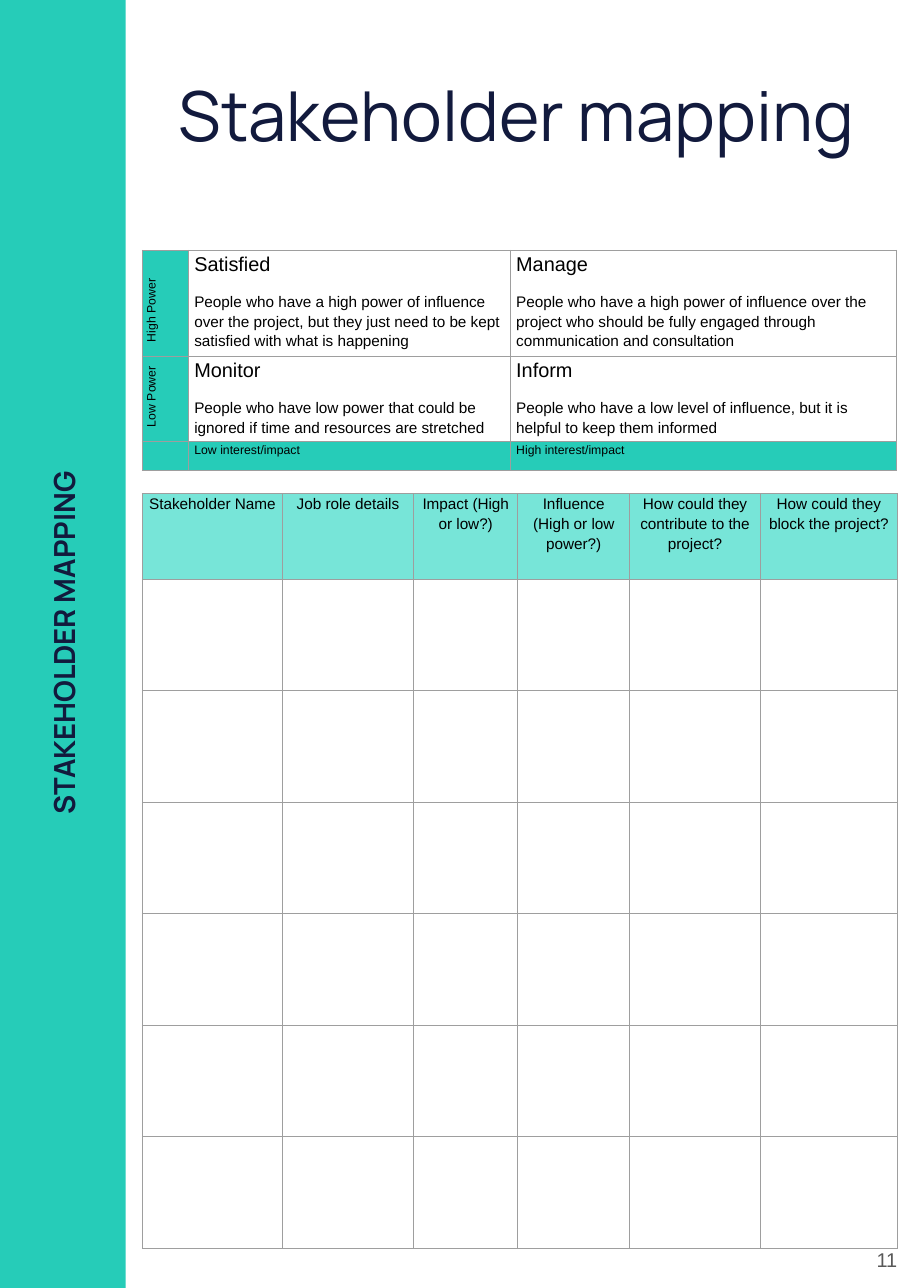
from lxml import etree
from pptx import Presentation
from pptx import util as u
from pptx.dml.color import RGBColor
from pptx.enum import shapes, text
from pptx.oxml.ns import qn

COLORS = {"teal": "26CCB8", "mint": "77E5D8", "navy": "121A3D",
          "line": "9E9E9E", "black": "000000", "grey": "595959"}
CENTER, LEFT, RIGHT = text.PP_ALIGN.CENTER, text.PP_ALIGN.LEFT, text.PP_ALIGN.RIGHT

SIDEBAR = (-0.1, 0, 3, 29.7)
LABELS = [
    {"words": "Stakeholder mapping", "box": (3.33, 1.42, 17.15, 4.37), "inset": 0.25,
     "font": {"name": "Manrope", "size": u.Pt(45)}, "color": "navy", "align": CENTER},
    {"words": "STAKEHOLDER MAPPING", "box": (-11.79, 14.17, 26.52, 1.32), "inset": 0.25,
     "font": {"name": "Manrope", "size": u.Pt(19), "bold": True}, "color": "navy",
     "align": CENTER, "rotation": 270},
    {"words": "11", "box": (19.74, 27.91, 1.27, 2.26), "inset": 0.33,
     "font": {"name": "Arial", "size": u.Pt(13)}, "color": "grey",
     "align": RIGHT, "anchor": text.MSO_ANCHOR.MIDDLE},
]

TABLE_LEFT = 3.28
POWER_TOP, POWER_COLS, POWER_ROWS = 5.77, [1.07, 7.42, 8.89], [2.08, 1.6, 0.66]
POWER_LEVELS = [
    ("High Power", [
        ("Satisfied", "People who have a high power of influence over the project, "
                      "but they just need to be kept satisfied with what is happening"),
        ("Manage", "People who have a high power of influence over the project who "
                   "should be fully engaged through communication and consultation")]),
    ("Low Power", [
        ("Monitor", "People who have low power that could be ignored if time and "
                    "resources are stretched"),
        ("Inform", "People who have a low level of influence, but it is helpful to "
                   "keep them informed")]),
]
INTERESTS = ["", "Low interest/impact", "High interest/impact"]

REGISTER_TOP, REGISTER_COLS = 11.38, [3.23, 3.02, 2.41, 2.57, 3.02, 3.15]
HEADER_HEIGHT, ENTRY_HEIGHT, ENTRIES = 1.98, 2.57, 6
HEADERS = ["Stakeholder Name", "Job role details", "Impact (High or low?)",
           "Influence (High or low power?)", "How could they contribute to the project?",
           "How could they block the project?"]


def rgb(name):
    return RGBColor.from_string(COLORS[name])


def apply(obj, values):
    for key, value in values.items():
        setattr(obj, key, value)


def add_text(p, words, font, color):
    r = p.add_run()
    r.text = words
    apply(r.font, font)
    r.font.color.rgb = rgb(color)


def add_label(sl, label):
    sp = sl.shapes.add_textbox(*map(u.Cm, label["box"]))
    sp.rotation = label.get("rotation", 0)
    tf, inset = sp.text_frame, u.Cm(label["inset"])
    apply(tf, {"word_wrap": True, "margin_left": inset, "margin_right": inset,
               "margin_top": inset, "margin_bottom": inset,
               "vertical_anchor": label.get("anchor", text.MSO_ANCHOR.TOP)})
    p = tf.paragraphs[0]
    p.alignment = label["align"]
    add_text(p, label["words"], label["font"], label["color"])


def fill_cell(cell, lines=(), fill=None, align=LEFT, upright=False):
    apply(cell, {"margin_left": u.Cm(0.13), "margin_right": u.Cm(0.13),
                 "margin_top": 0, "margin_bottom": 0})
    if fill:
        cell.fill.solid()
        cell.fill.fore_color.rgb = rgb(fill)
    else:
        cell.fill.background()
    tc_pr = cell._tc.get_or_add_tcPr()
    for i, side in enumerate(("lnL", "lnR", "lnT", "lnB")):
        ln = etree.Element(qn("a:" + side), w=str(u.Pt(0.75)))
        solid = etree.SubElement(ln, qn("a:solidFill"))
        etree.SubElement(solid, qn("a:srgbClr"), val=COLORS["line"])
        tc_pr.insert(i, ln)
    if upright:
        tc_pr.set("vert", "vert270")
    tf = cell.text_frame
    for i, (words, size) in enumerate(lines):
        p = tf.add_paragraph() if i else tf.paragraphs[0]
        apply(p, {"alignment": align, "line_spacing": 1.15, "space_after": u.Pt(10)})
        if upright:
            p._p.get_or_add_pPr().set("marL", str(u.Cm(0.2)))
        add_text(p, words, {"name": "Arial", "size": u.Pt(size)}, "black")
    if not lines:
        etree.SubElement(tf.paragraphs[0]._p, qn("a:endParaRPr"), sz="800")


def add_grid(sl, top, widths, heights):
    frame = sl.shapes.add_table(len(heights), len(widths), u.Cm(TABLE_LEFT), u.Cm(top),
                                u.Cm(sum(widths)), u.Cm(sum(heights)))
    grid = frame.table
    apply(grid, {"first_row": False, "horz_banding": False})
    for col, width in zip(grid.columns, widths):
        col.width = u.Cm(width)
    for row, height in zip(grid.rows, heights):
        row.height = u.Cm(height)
    return grid


def main():
    prs = Presentation()
    apply(prs, {"slide_width": u.Cm(21), "slide_height": u.Cm(29.7)})
    sl = prs.slides.add_slide(prs.slide_layouts[6])

    sp = sl.shapes.add_shape(shapes.MSO_SHAPE.RECTANGLE, *map(u.Cm, SIDEBAR))
    sp.shadow.inherit = False
    sp.fill.solid()
    sp.fill.fore_color.rgb = rgb("teal")
    sp.line.fill.background()
    for label in LABELS:
        add_label(sl, label)

    power = add_grid(sl, POWER_TOP, POWER_COLS, POWER_ROWS)
    for r, (level, groups) in enumerate(POWER_LEVELS):
        fill_cell(power.cell(r, 0), [(level, 8)], "teal", upright=True)
        for c, (name, advice) in enumerate(groups, 1):
            fill_cell(power.cell(r, c), [(name, 13), (advice, 10)])
    for c, interest in enumerate(INTERESTS):
        fill_cell(power.cell(len(POWER_LEVELS), c), [(interest, 8)] if interest else (), "teal")

    register = add_grid(sl, REGISTER_TOP, REGISTER_COLS,
                        [HEADER_HEIGHT] + [ENTRY_HEIGHT] * ENTRIES)
    for c, header in enumerate(HEADERS):
        fill_cell(register.cell(0, c), [(header, 10)], "mint", CENTER)
        for r in range(1, ENTRIES + 1):
            fill_cell(register.cell(r, c))

    prs.save("out.pptx")


if __name__ == "__main__":
    main()
